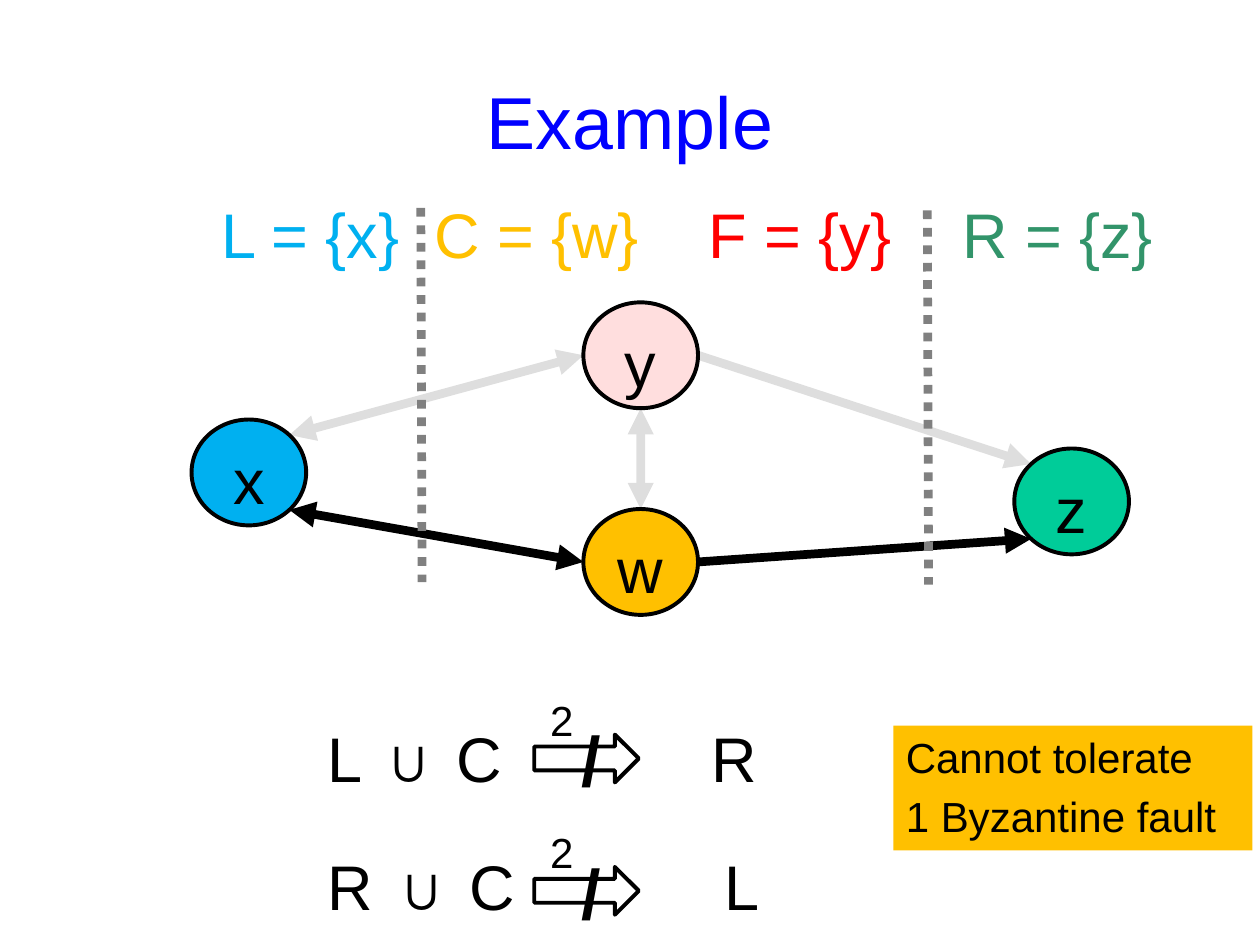
from math import sqrt

from lxml.etree import SubElement
from pptx import Presentation
from pptx.dml.color import RGBColor
from pptx.enum.dml import MSO_LINE
from pptx.enum.shapes import MSO_CONNECTOR, MSO_SHAPE
from pptx.enum.text import MSO_ANCHOR, MSO_AUTO_SIZE, PP_ALIGN
from pptx.oxml.ns import qn
from pptx.util import Inches, Pt

COLORS = {
    "title": "0000FF", "black": "000000", "white": "FFFFFF", "gray": "808080",
    "blue": "00B0F0", "gold": "FFC000", "red": "FF0000",
    "teal": "00CC99", "green": "32946A",
}
FONT, SYMBOL_FONT = "Arial", "Times New Roman"
FADED = 13  # percent opacity of the faulty node and its links

# text, left, width, colour
SETS = [
    ("L = {x}", 1.65, 1.63, "blue"),
    ("C = {w}", 3.26, 2, "gold"),
    ("F = {y}", 5.47, 1.76, "red"),
    ("R = {z}", 7.53, 1.73, "green"),
]
# name: left, top, colour, opacity
NODES = {
    "x": (1.52, 3.33, "blue", 100),
    "y": (4.63, 2.4, "red", FADED),
    "z": (8.05, 3.56, "teal", 100),
    "w": (4.63, 4.04, "gold", 100),
}
NODE_W, NODE_H = 0.91, 0.84
D = 1 / sqrt(2)
# node and direction from its centre at each end, two-way, opacity
LINKS = [
    ("w", (-1, 0), "x", (D, D), True, 100),
    ("w", (0, -1), "y", (0, 1), True, FADED),
    ("w", (1, 0), "z", (-D, D), False, 100),
    ("y", (1, 0), "z", (-D, -D), False, FADED),
    ("y", (-1, 0), "x", (D, -D), True, FADED),
]
DIVIDERS = [(3.34, 1.65), (7.36, 1.67)]
# runs of the left side, runs of the right side
RELATIONS = [(("L ", "∪ ", "C"), ("R",)), (("R ", "∪ ", "C"), ("L",))]
# left, width and indent per row for each side of the relations
SIDES = [(2.5, 1.8, 0), (5.55, 1.2, 0.1)]
RELATION_TOP, RELATION_PITCH = 5.46, 1.05
VERDICT = ["Cannot tolerate", "1 Byzantine fault"]


def rgb(name):
    return RGBColor.from_string(COLORS[name])


def format_runs(p, size, color="black", bold=False):
    for r in p.runs:
        r.font.name = SYMBOL_FONT if "∪" in r.text else FONT
        r.font.size, r.font.bold = Pt(size), bold
        r.font.color.rgb = rgb(color)


def set_opacity(parent, percent):
    """Make the solid fill found under an element see-through."""
    if percent < 100:
        clr = parent.find(qn("a:solidFill")).find(qn("a:srgbClr"))
        SubElement(clr, qn("a:alpha"), val=str(percent * 1000))


def write(sp, lines, size, color="black", bold=False, align=PP_ALIGN.CENTER, wrap=False):
    tf = sp.text_frame
    tf.text = "\n".join(lines)
    tf.word_wrap = wrap
    tf.vertical_anchor = MSO_ANCHOR.TOP
    for p in tf.paragraphs:
        p.alignment = align
        p.space_before = Pt(size * 0.2)
        format_runs(p, size, color, bold)


def add_text(slide, text, left, top, width, height, size, **style):
    sp = slide.shapes.add_textbox(*map(Inches, (left, top, width, height)))
    write(sp, [text], size, **style)


def add_shape(slide, kind, left, top, width, height, fill, outlined=True, opacity=100):
    sp = slide.shapes.add_shape(kind, *map(Inches, (left, top, width, height)))
    sp.shadow.inherit = False
    sp.fill.solid()
    sp.fill.fore_color.rgb = rgb(fill)
    set_opacity(sp.element.spPr, opacity)
    if outlined:
        sp.line.color.rgb = rgb("black")
        sp.line.width = Pt(2.25)
    else:
        sp.line.fill.background()
    return sp


def add_line(slide, start, end, color="black", opacity=100, arrows=(), dash=None):
    line = slide.shapes.add_connector(MSO_CONNECTOR.STRAIGHT, *map(Inches, start + end))
    line.line.color.rgb = rgb(color)
    line.line.width = Pt(5)
    if dash:
        line.line.dash_style = dash
    ln = line.line._get_or_add_ln()
    set_opacity(ln, opacity)
    for arrow in arrows:
        SubElement(ln, qn(arrow), type="triangle")
    SubElement(line.element.spPr, qn("a:effectLst"))


def rim(name, direction):
    """Point on a node's outline in the given direction from its centre."""
    left, top = NODES[name][:2]
    dx, dy = direction
    return left + NODE_W / 2 * (1 + dx), top + NODE_H / 2 * (1 + dy)


def place(ph, left, top, width, height):
    ph.left, ph.top, ph.width, ph.height = map(Inches, (left, top, width, height))


def add_title(slide):
    title = slide.shapes.title
    place(title, 0.75, 0.33, 8.5, 1.25)
    title.text_frame.text = "Example"
    title.text_frame.vertical_anchor = MSO_ANCHOR.MIDDLE
    p = title.text_frame.paragraphs[0]
    p.alignment = PP_ALIGN.CENTER
    format_runs(p, 42, "title")


def fill_side(ph, rows, left, width, step):
    """Write one side of the relations, indenting each row by one more step."""
    place(ph, left, 5.66, width, 1.75)
    tf = ph.text_frame
    tf.auto_size = MSO_AUTO_SIZE.NONE
    tf.vertical_anchor = MSO_ANCHOR.TOP
    for i, texts in enumerate(rows):
        p = tf.add_paragraph() if i else tf.paragraphs[0]
        for text in texts:
            p.add_run().text = text
        p.space_before = Pt(30 * i)
        pPr = p._p.get_or_add_pPr()
        pPr.set("marL", str(Inches(step * i)))
        pPr.set("indent", "0")
        SubElement(pPr, qn("a:buNone"))
        format_runs(p, 36)


def add_relations(slide):
    for idx, (rows, side) in enumerate(zip(zip(*RELATIONS), SIDES), start=1):
        fill_side(slide.placeholders[idx], rows, *side)
    for i in range(len(RELATIONS)):
        top = RELATION_TOP + i * RELATION_PITCH
        add_text(slide, "2", 4.13, top, 0.66, 0.5, 24, wrap=True)
        add_shape(slide, MSO_SHAPE.RIGHT_ARROW, 4.24, top + 0.37, 0.83, 0.38, "white")
        add_text(slide, "/", 4.51, top + 0.18, 0.36, 0.77, 40, bold=True)


def add_graph(slide):
    for a, a_dir, b, b_dir, two_way, opacity in LINKS:
        arrows = ("a:headEnd", "a:tailEnd") if two_way else ("a:tailEnd",)
        add_line(slide, rim(a, a_dir), rim(b, b_dir), opacity=opacity, arrows=arrows)
    for x, y in DIVIDERS:
        add_line(slide, (x, y), (x + 0.01, y + 2.97), "gray", dash=MSO_LINE.ROUND_DOT)
    for name, (left, top, color, opacity) in NODES.items():
        sp = add_shape(slide, MSO_SHAPE.OVAL, left, top, NODE_W, NODE_H, color, opacity=opacity)
        write(sp, [name], 36, wrap=True)
    for text, left, width, color in SETS:
        add_text(slide, text, left, 1.5, width, 0.71, 36, color=color)


def main():
    prs = Presentation()
    prs.slide_width, prs.slide_height = Inches(10), Inches(7.5)
    slide = prs.slides.add_slide(prs.slide_layouts[3])
    add_title(slide)
    add_relations(slide)
    add_graph(slide)
    sp = add_shape(slide, MSO_SHAPE.RECTANGLE, 7.09, 5.76, 2.85, 0.99, "gold", outlined=False)
    write(sp, VERDICT, 24, align=PP_ALIGN.LEFT)
    prs.save("out.pptx")


if __name__ == "__main__":
    main()
